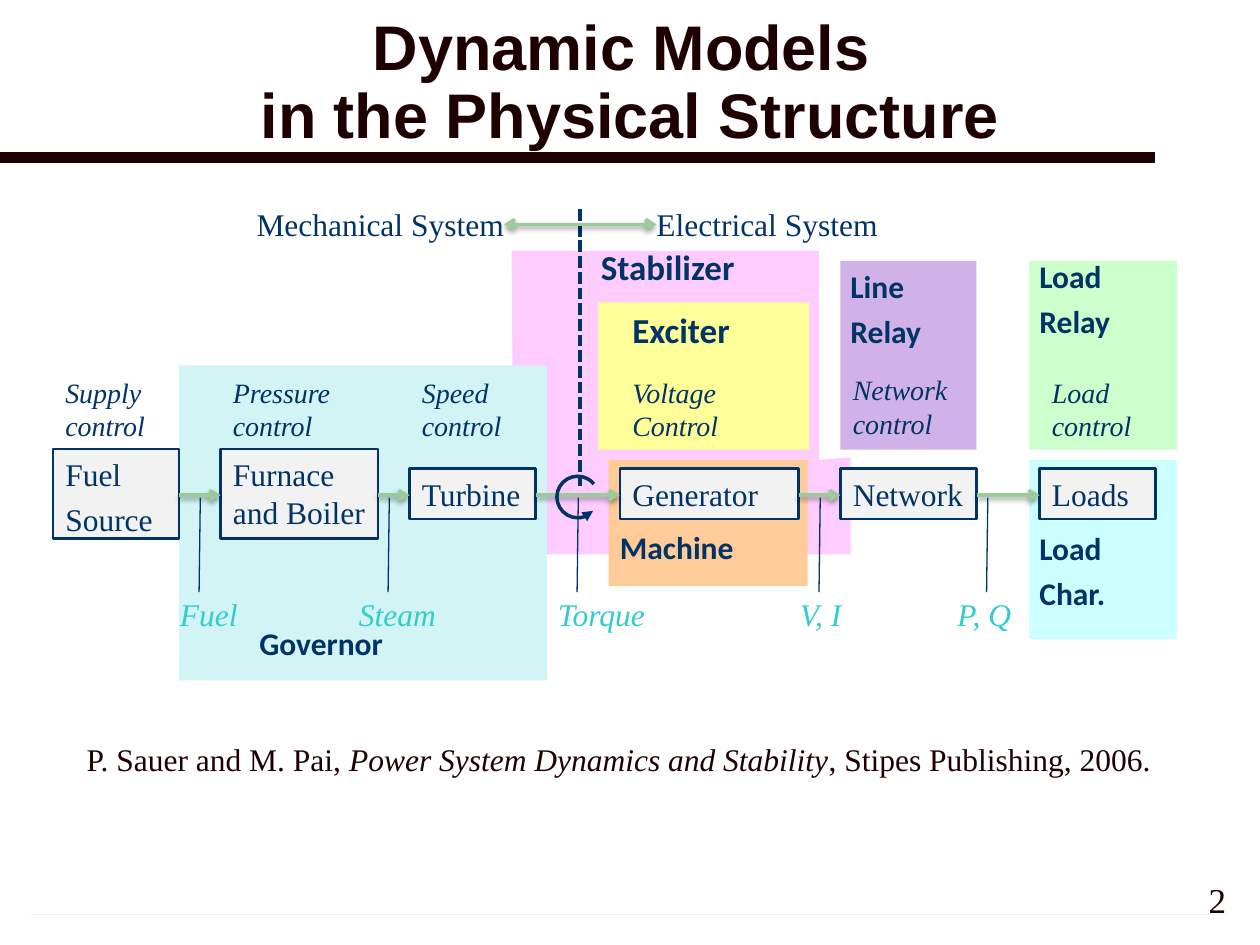
from dataclasses import dataclass

from lxml.etree import SubElement
from pptx import Presentation
from pptx.dml.color import RGBColor
from pptx.enum.dml import MSO_LINE
from pptx.enum.shapes import MSO_CONNECTOR, MSO_SHAPE
from pptx.enum.text import MSO_ANCHOR, PP_ALIGN
from pptx.oxml.ns import qn
from pptx.util import Inches, Pt

COLORS = {
    "ink": "1E0000", "navy": "003366", "teal": "33CCCC", "arrow": "99CC99",
    "stage": "F2F2F2", "stabilizer": "FFCCFF", "machine": "FFCC99",
    "line_relay": "D1B2E8", "load_relay": "CCFFCC", "load": "CCFFFF",
    "governor": "D2F4F4", "exciter": "FFFF99", "rule": "CC99FF",
    "rule_light": "F3EBFF", "shadow": "000000",
}


@dataclass
class Frame:
    left: float
    top: float
    width: float
    height: float

    def point(self, x, y):
        return Inches(self.left + x), Inches(self.top + y)

    def area(self, left, top, width, height):
        return (*self.point(left, top), Inches(width), Inches(height))


def color(name):
    return RGBColor.from_string(COLORS[name])


def write_text(box, text, size=18, font="Times New Roman", ink="navy", bold=False,
               italic=False, align=PP_ALIGN.LEFT, anchor=MSO_ANCHOR.TOP,
               inset=0.1, line_spacing=None):
    frame = box.text_frame
    frame.word_wrap = True
    frame.vertical_anchor = anchor
    frame.margin_left = frame.margin_right = Inches(inset)
    frame.margin_top = frame.margin_bottom = Inches(0.05)
    for index, line in enumerate(text.split("\n")):
        para = frame.add_paragraph() if index else frame.paragraphs[0]
        para.alignment = align
        para.line_spacing = line_spacing
        if index:
            para.space_before = Pt(size * 0.22)
        for part, words in enumerate(line.split("*")):
            for piece, row in enumerate(words.split("\v")):
                if piece:
                    para.add_line_break()
                span = para.add_run()
                span.text = row
                span.font.size = Pt(size)
                span.font.name = font
                span.font.bold = bold
                span.font.italic = italic or part % 2 == 1
                span.font.color.rgb = color(ink)


def add_label(page, area, text, **style):
    write_text(page.shapes.add_textbox(*area), text, **style)


def add_block(page, area, fill):
    block = page.shapes.add_shape(MSO_SHAPE.RECTANGLE, *area)
    block.shadow.inherit = False
    block.fill.solid()
    block.fill.fore_color.rgb = color(fill)
    block.line.fill.background()
    return block


def add_line(page, start, end, ink, width):
    line = page.shapes.add_connector(MSO_CONNECTOR.STRAIGHT, *start, *end)
    line.line.color.rgb = color(ink)
    line.line.width = Pt(width)
    SubElement(line._element.spPr, qn("a:effectLst"))
    return line


def add_arrow(page, start, end, ends=("tailEnd",)):
    arrow = add_line(page, start, end, "arrow", 2)
    for name in ends:
        SubElement(arrow.line._get_or_add_ln(), qn(f"a:{name}"), type="arrow")
    effects = arrow._element.spPr.find(qn("a:effectLst"))
    shadow = SubElement(effects, qn("a:outerShdw"), blurRad=str(Pt(3.1)),
                        dist=str(Pt(1.6)), dir="5400000", rotWithShape="0")
    shade = SubElement(shadow, qn("a:srgbClr"), val=COLORS["shadow"])
    SubElement(shade, qn("a:alpha"), val="38000")


def draw_title(page, frame):
    add_line(page, frame.point(0, frame.height), frame.point(9.17, frame.height), "ink", 6)
    add_label(page, frame.area(0.25, 0.08, 9.5, 1.17),
              "Dynamic Models \vin the Physical Structure", size=36, font="Arial",
              ink="ink", bold=True, align=PP_ALIGN.CENTER,
              anchor=MSO_ANCHOR.MIDDLE, line_spacing=0.9)


def draw_zones(page, frame):
    corners = [(5.33, 2.5), (5.33, 1.73), (5.08, 1.75), (5.08, 0.09), (2.64, 0.09), (2.66, 2.5)]
    points = [frame.point(*corner) for corner in corners]
    builder = page.shapes.build_freeform(*points[0])
    builder.add_line_segments(points[1:], close=True)
    stabilizer = builder.convert_to_shape()
    stabilizer.shadow.inherit = False
    stabilizer.fill.solid()
    stabilizer.fill.fore_color.rgb = color("stabilizer")
    stabilizer.line.fill.background()
    for fill, area in [
        ("machine", (3.41, 1.75, 1.58, 1)),
        ("line_relay", (5.25, 0.17, 1.08, 1.5)),
        ("load_relay", (6.75, 0.17, 1.17, 1.5)),
        ("load", (6.75, 1.75, 1.17, 1.42)),
        ("governor", (0, 1, 2.92, 2.5)),
        ("exciter", (3.33, 0.5, 1.67, 1.17)),
    ]:
        add_block(page, frame.area(*area), fill)
    for text, area, size, inset in [
        ("Machine", (3.5, 2.24, 1.42, 0.4), 18, 0),
        ("Governor", (0.54, 3, 2.25, 0.4), 18, 0.1),
        ("Exciter", (3.5, 0.5, 1.42, 0.44), 20, 0.1),
        ("Load\nChar.", (6.83, 2.25, 1, 0.77), 18, 0),
        ("Load\nRelay", (6.83, 0.09, 1, 0.77), 18, 0),
        ("Line\nRelay", (5.33, 0.17, 0.83, 0.77), 18, 0),
        ("Stabilizer", (3.25, 0, 1.58, 0.44), 20, 0.1),
    ]:
        add_label(page, frame.area(*area), text, size=size, font="Calibri",
                  bold=True, inset=inset)


def draw_stages(page, frame):
    stages = [
        ("Fuel\nSource", "Supply control", 0, 1, 0.71, 0.02),
        ("Furnace and Boiler", "Pressure control", 1.33, 1.25, 0.71, 0.02),
        ("Turbine", "Speed control", 2.83, 1, 0.4, 0.02),
        ("Generator", "Voltage Control", 4.5, 1.42, 0.4, 0.02),
        ("Network", "Network control", 6.25, 1.08, 0.4, 0),
        ("Loads", "Load control", 7.83, 0.92, 0.4, 0.02),
    ]
    middle = 1.01
    for name, control, left, width, height, control_top in stages:
        block = add_block(page, frame.area(left, middle - height / 2, width, height), "stage")
        block.line.color.rgb = color("navy")
        block.line.width = Pt(1.5)
        write_text(block, name)
        add_label(page, frame.area(left, control_top, width, 0.64), control,
                  size=16, italic=True)
    for source, target in zip(stages, stages[1:]):
        add_arrow(page, frame.point(source[2] + source[3], 1.02), frame.point(target[2], 1.02))


def draw_signals(page, frame):
    for text, left, width, offset in [
        ("Fuel", 0, 0.92, 0.25),
        ("Steam", 1.42, 0.92, 0.33),
        ("Torque", 3, 0.92, 0.25),
        ("V, I", 4.92, 0.67, 0.25),
        ("P, Q", 6.17, 0.67, 0.33),
    ]:
        tick = left + offset
        add_line(page, frame.point(tick, 0.75), frame.point(tick + 0.01, 0), "navy", 0.75)
        add_label(page, frame.area(left, 0.72, width, 0.4), text, ink="teal", italic=True)


def draw_boundary(page, frame):
    divider = add_line(page, frame.point(2.68, 0.08), frame.point(2.68, 2.28), "navy", 2.25)
    divider.line.dash_style = MSO_LINE.SQUARE_DOT
    add_label(page, frame.area(0, 0, 2.08, 0.4), "Mechanical System",
              align=PP_ALIGN.RIGHT, inset=0)
    add_label(page, frame.area(3.29, 0, 1.92, 0.4), "Electrical System", inset=0)
    add_arrow(page, frame.point(2.08, 0.2), frame.point(3.29, 0.2), ("headEnd", "tailEnd"))
    rotation = page.shapes.add_shape(MSO_SHAPE.ARC, *frame.area(2.5, 2.2, 0.33, 0.33))
    rotation.shadow.inherit = False
    rotation.adjustments[0] = 25.21
    rotation.adjustments[1] = 192.86
    rotation.fill.background()
    rotation.line.color.rgb = color("navy")
    rotation.line.width = Pt(2)
    SubElement(rotation.line._get_or_add_ln(), qn("a:headEnd"), type="triangle")


def draw_citation(page, frame):
    add_label(page, frame.area(0, 0, frame.width, frame.height),
              "P. Sauer and M. Pai, *Power System Dynamics and Stability*, "
              "Stipes Publishing, 2006.", ink="ink", align=PP_ALIGN.CENTER)


def draw_footer(page, frame):
    rule = add_block(page, frame.area(0, 0.33, 9.5, 0.01), "rule")
    rule.fill.gradient()
    for stop, name in zip(rule.fill.gradient_stops, ("rule", "rule_light")):
        stop.color.rgb = color(name)
    add_label(page, frame.area(9, 0, 0.58, 0.5), "2", size=20, ink="ink", align=PP_ALIGN.RIGHT)


def main():
    deck = Presentation()
    deck.slide_width, deck.slide_height = Inches(10), Inches(7.5)
    page = deck.slides.add_slide(deck.slide_layouts[6])
    draw_title(page, Frame(0, 0, 10, 1.25))
    draw_zones(page, Frame(1.42, 1.9, 7.92, 3.5))
    draw_stages(page, Frame(0.42, 2.91, 8.75, 1.37))
    draw_signals(page, Frame(1.33, 3.95, 6.84, 1.12))
    draw_boundary(page, Frame(1.92, 1.58, 5.21, 2.53))
    draw_citation(page, Frame(0.37, 5.82, 9.08, 0.42))
    draw_footer(page, Frame(0.25, 6.92, 9.58, 0.5))
    deck.save("out.pptx")


if __name__ == "__main__":
    main()
